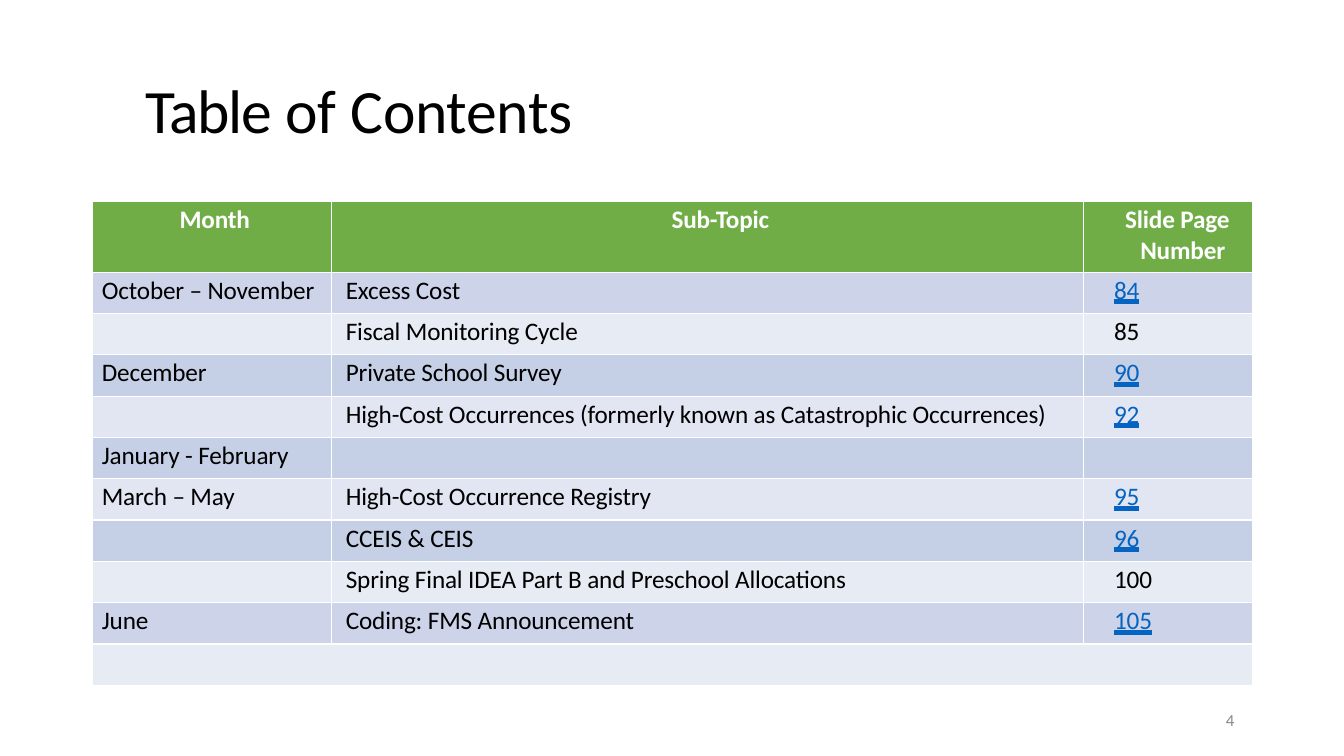
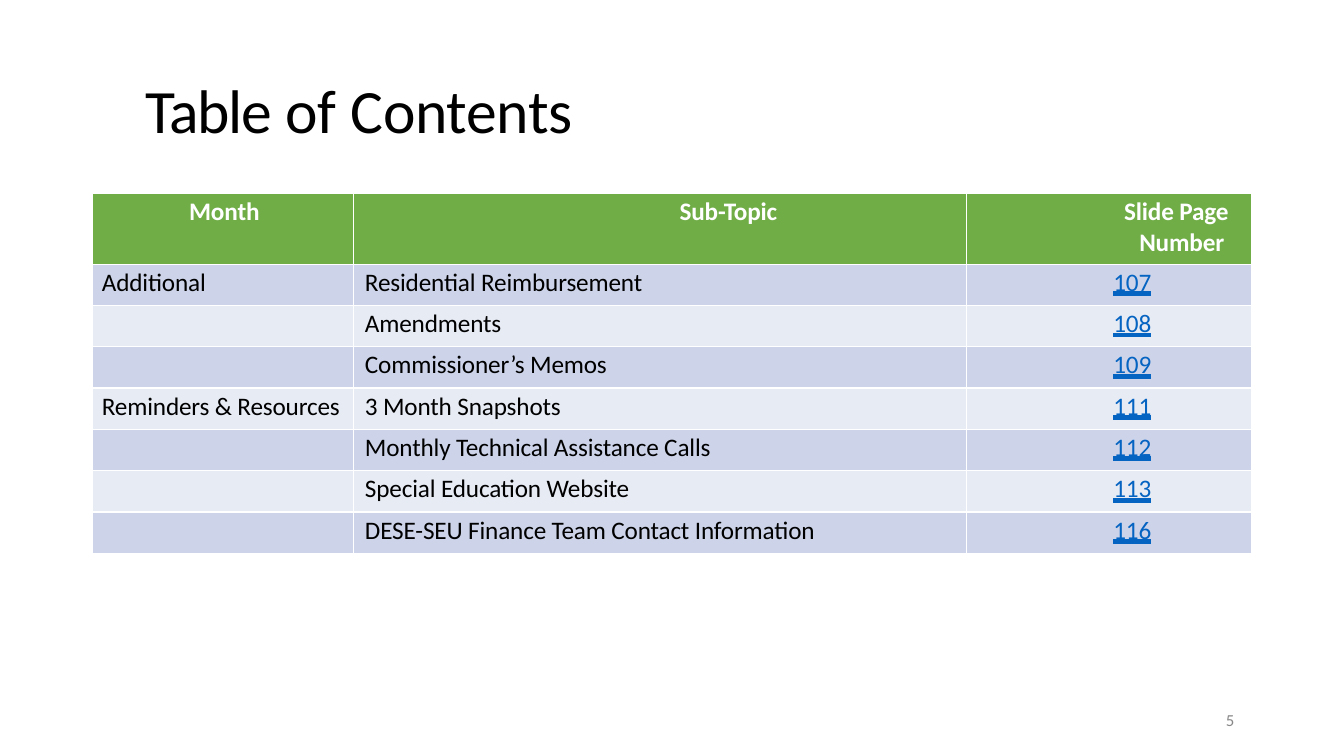
from dataclasses import dataclass

from pptx import Presentation
from pptx.dml.color import RGBColor
from pptx.enum.text import MSO_ANCHOR, MSO_AUTO_SIZE, MSO_UNDERLINE, PP_ALIGN
from pptx.presentation import Presentation as Deck
from pptx.slide import Slide
from pptx.table import _Cell as Cell
from pptx.text.text import TextFrame, _Paragraph as Paragraph
from pptx.util import Inches, Pt


@dataclass(frozen=True)
class Theme:
    font: str = "Calibri"
    title_size: int = 44
    table_size: int = 18
    number_size: int = 12
    black: str = "000000"
    white: str = "FFFFFF"
    gray: str = "888888"
    link: str = "0563C1"
    header: str = "70AD47"
    bands: tuple[str, str] = ("CDD4EA", "E7EBF4")
    cool_bands: tuple[str, str] = ("C5CFE5", "E2E5F2")


@dataclass(frozen=True)
class Column:
    title: str
    width: float
    header_indent: float
    body_indent: float
    header_align: PP_ALIGN = PP_ALIGN.LEFT
    hanging: float = 0
    body_align: PP_ALIGN = PP_ALIGN.LEFT
    right_margin: float = 0


@dataclass(frozen=True)
class Entry:
    month: str = ""
    topic: str = ""
    page: str = ""
    linked: bool = True


@dataclass(frozen=True)
class Contents:
    number: int
    top: float
    columns: tuple[Column, ...]
    entries: tuple[Entry, ...]
    cool_rows: range = range(0)


THEME = Theme()
TITLE_RUNS = (("Table ", -80), ("of ", -10), ("Contents", -20))
TABLE_LEFT = 0.92
HEADER_HEIGHT = 0.7
ROW_HEIGHT = 0.41

PAGES = (
    Contents(
        number=4,
        top=2,
        columns=(
            Column("Month", 2.37, 0.05, 0.09, PP_ALIGN.CENTER),
            Column("Sub-Topic", 7.46, 0.25, 0.14, PP_ALIGN.CENTER),
            Column("Slide Page Number", 1.67, 0.56, 0.3, hanging=0.15),
        ),
        entries=(
            Entry("October – November", "Excess Cost", "84"),
            Entry("", "Fiscal Monitoring Cycle", "85", linked=False),
            Entry("December", "Private School Survey", "90"),
            Entry("", "High-Cost Occurrences (formerly known as Catastrophic Occurrences)", "92"),
            Entry("January - February"),
            Entry("March – May", "High-Cost Occurrence Registry", "95"),
            Entry("", "CCEIS & CEIS", "96"),
            Entry("", "Spring Final IDEA Part B and Preschool Allocations", "100", linked=False),
            Entry("June", "Coding: FMS Announcement", "105"),
            Entry(),
        ),
        cool_rows=range(2, 7),
    ),
    Contents(
        number=5,
        top=1.92,
        columns=(
            Column("Month", 2.59, 0.02, 0.09, PP_ALIGN.CENTER),
            Column("Sub-Topic", 6.08, 3.23, 0.11),
            Column("Slide Page Number", 2.82, 1.71, 0, hanging=0.15,
                   body_align=PP_ALIGN.RIGHT, right_margin=0.99),
        ),
        entries=(
            Entry("Additional", "Residential Reimbursement", "107"),
            Entry("", "Amendments", "108"),
            Entry("", "Commissioner’s Memos", "109"),
            Entry("Reminders & Resources", "3 Month Snapshots", "111"),
            Entry("", "Monthly Technical Assistance Calls", "112"),
            Entry("", "Special Education Website", "113"),
            Entry("", "DESE-SEU Finance Team Contact Information", "116"),
        ),
    ),
)


def style_font(paragraph: Paragraph, size: int, color: str, bold: bool = False) -> None:
    font = paragraph.font
    font.name = THEME.font
    font.size = Pt(size)
    font.bold = bold
    font.color.rgb = RGBColor.from_string(color)


def set_indent(paragraph: Paragraph, left: float, hanging: float = 0) -> None:
    properties = paragraph._p.get_or_add_pPr()
    properties.set("marL", str(Inches(left)))
    properties.set("indent", str(-Inches(hanging)))


def clear_frame(frame: TextFrame) -> None:
    frame.margin_left = frame.margin_right = frame.margin_top = frame.margin_bottom = 0
    frame.auto_size = MSO_AUTO_SIZE.NONE
    frame.vertical_anchor = MSO_ANCHOR.TOP
    frame.word_wrap = True


def add_title(slide: Slide) -> None:
    title = slide.shapes.title
    title.left, title.top = Inches(1.43), Inches(0.71)
    title.width, title.height = Inches(4.34), Inches(0.78)
    clear_frame(title.text_frame)
    paragraph = title.text_frame.paragraphs[0]
    paragraph.alignment = PP_ALIGN.LEFT
    set_indent(paragraph, 0.01)
    style_font(paragraph, THEME.title_size, THEME.black)
    for text, spacing in TITLE_RUNS:
        run = paragraph.add_run()
        run.text = text
        run.font._element.set("spc", str(spacing))


def add_slide_number(slide: Slide, number: int) -> None:
    box = slide.shapes.add_textbox(Inches(12.13), Inches(7.07), Inches(0.23), Inches(0.19))
    clear_frame(box.text_frame)
    paragraph = box.text_frame.paragraphs[0]
    paragraph.text = str(number)
    paragraph.line_spacing = Pt(12.4)
    set_indent(paragraph, 0.03)
    style_font(paragraph, THEME.number_size, THEME.gray)


def fill_cell(cell: Cell, text: str, fill: str, color: str) -> Paragraph:
    cell.fill.solid()
    cell.fill.fore_color.rgb = RGBColor.from_string(fill)
    cell.margin_left = cell.margin_right = cell.margin_bottom = 0
    cell.margin_top = Inches(0.03)
    paragraph = cell.text_frame.paragraphs[0]
    paragraph.text = text
    paragraph.space_before = Pt(2.2)
    style_font(paragraph, THEME.table_size, color, bold=fill == THEME.header)
    paragraph.font._element.set("spc", "-10")
    return paragraph


def add_contents_table(slide: Slide, contents: Contents) -> None:
    columns, entries = contents.columns, contents.entries
    width = sum(column.width for column in columns)
    height = HEADER_HEIGHT + ROW_HEIGHT * len(entries)
    table = slide.shapes.add_table(
        len(entries) + 1, len(columns),
        Inches(TABLE_LEFT), Inches(contents.top), Inches(width), Inches(height),
    ).table
    for row in table.rows:
        row.height = Inches(ROW_HEIGHT)
    table.rows[0].height = Inches(HEADER_HEIGHT)

    for column_index, column in enumerate(columns):
        table.columns[column_index].width = Inches(column.width)
        header = fill_cell(table.cell(0, column_index), column.title, THEME.header, THEME.white)
        header.alignment = column.header_align
        set_indent(header, column.header_indent, column.hanging)

    for index, entry in enumerate(entries):
        bands = THEME.cool_bands if index in contents.cool_rows else THEME.bands
        for column_index, text in enumerate((entry.month, entry.topic, entry.page)):
            column = columns[column_index]
            linked = column_index == 2 and entry.linked
            cell = table.cell(index + 1, column_index)
            paragraph = fill_cell(cell, text, bands[index % 2], THEME.link if linked else THEME.black)
            paragraph.alignment = column.body_align
            set_indent(paragraph, column.body_indent)
            cell.margin_right = Inches(column.right_margin)
            if linked:
                paragraph.font.underline = MSO_UNDERLINE.HEAVY_LINE
        if entry == Entry():
            table.cell(index + 1, 0).merge(table.cell(index + 1, len(columns) - 1))


def add_contents_slide(presentation: Deck, contents: Contents) -> None:
    slide = presentation.slides.add_slide(presentation.slide_layouts[5])
    add_title(slide)
    add_slide_number(slide, contents.number)
    add_contents_table(slide, contents)


def main() -> None:
    presentation = Presentation()
    presentation.slide_width = Inches(13.33)
    presentation.slide_height = Inches(7.5)
    for contents in PAGES:
        add_contents_slide(presentation, contents)
    presentation.save("out.pptx")


if __name__ == "__main__":
    main()
